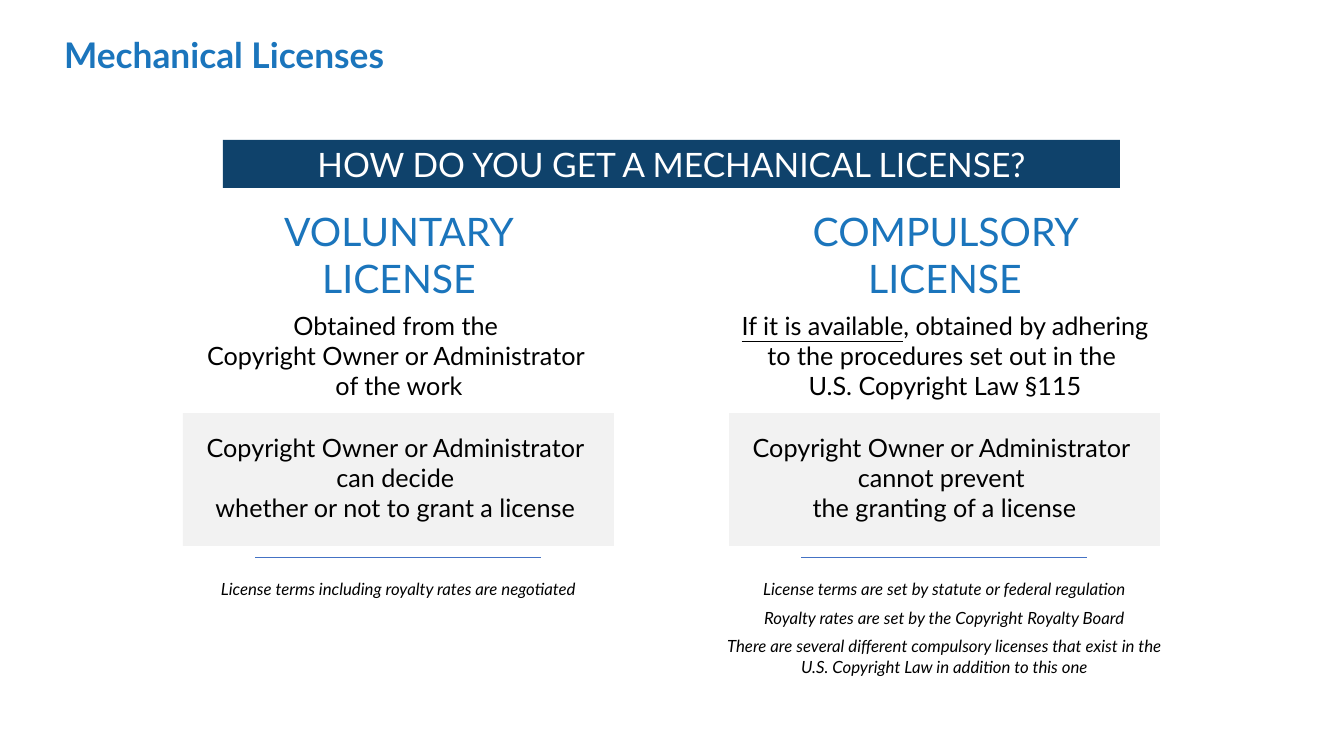
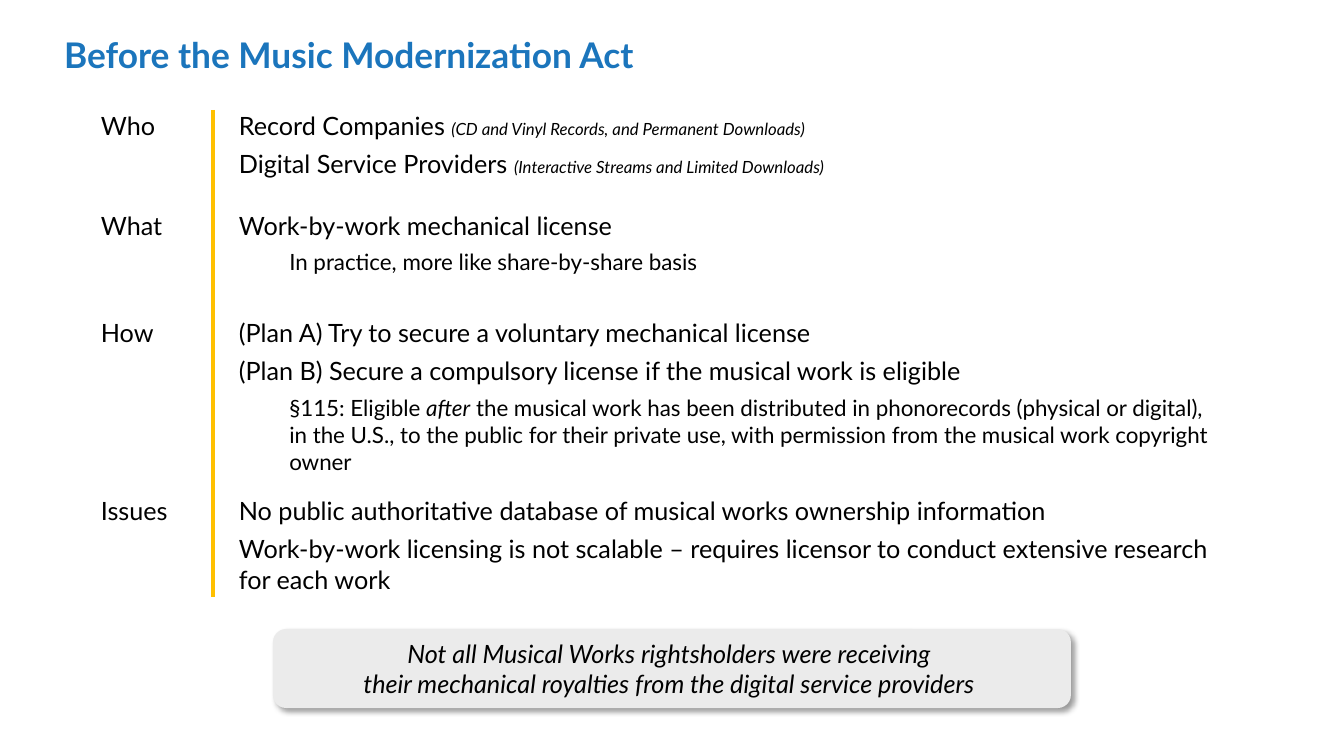
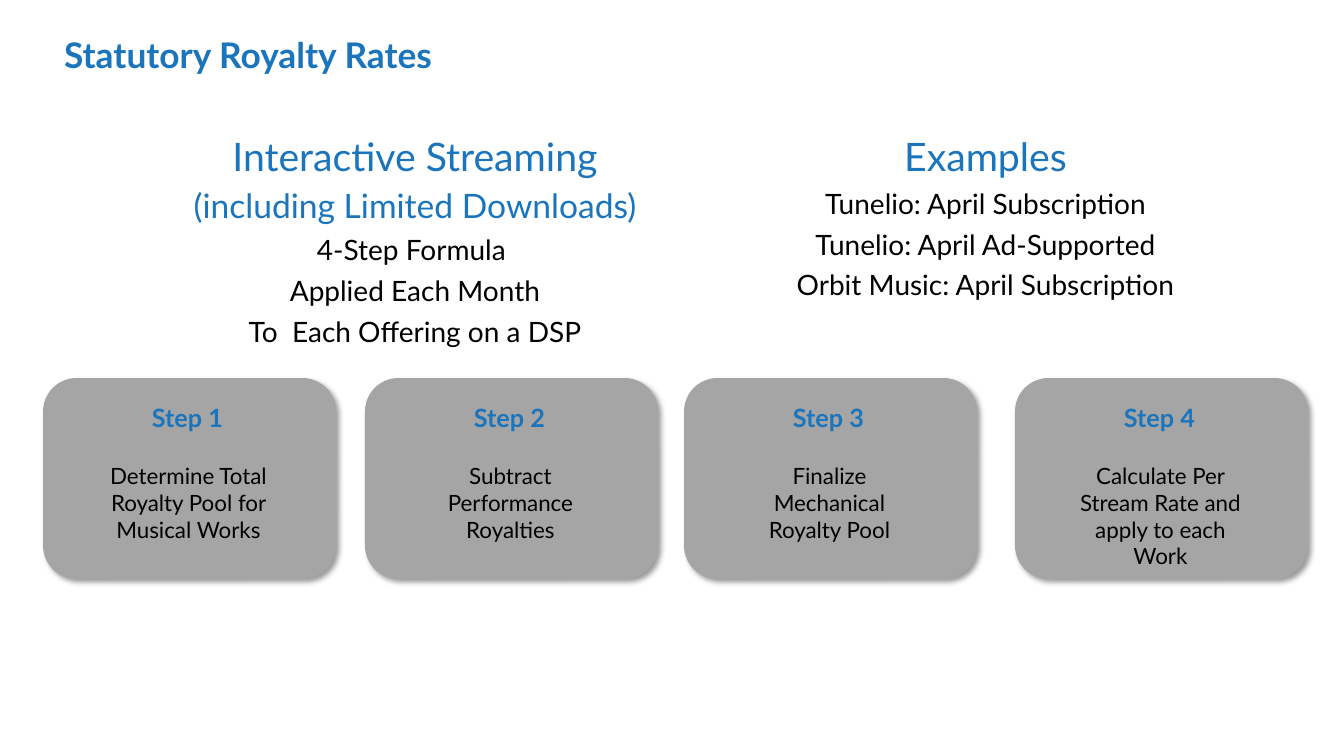
import pptx
import pptx.dml.color
import pptx.enum.shapes
import pptx.enum.text
import pptx.oxml
import pptx.oxml.ns
import pptx.util

RGB = pptx.dml.color.RGBColor
SHAPE = pptx.enum.shapes.MSO_SHAPE
ALIGN = pptx.enum.text.PP_ALIGN
ANCHOR = pptx.enum.text.MSO_ANCHOR
Pt = pptx.util.Pt

BLUE = RGB(0x1B, 0x75, 0xBC)
NAVY = RGB(0x0F, 0x42, 0x6B)
RULE_BLUE = RGB(0x44, 0x72, 0xC4)
GOLD = RGB(0xFF, 0xC0, 0x00)
WHITE = RGB(0xFF, 0xFF, 0xFF)
BLACK = RGB(0x00, 0x00, 0x00)
PALE = RGB(0xF2, 0xF2, 0xF2)
LIGHT = RGB(0xEB, 0xEB, 0xEB)
GREY = RGB(0xA5, 0xA5, 0xA5)

FONT = "Lato"
PX_PER_INCH = 100.8
TITLE_ONLY = 5
CENTRED = {"alignment": ALIGN.CENTER}
LEFT = {"alignment": ALIGN.LEFT}
SPACED = {"alignment": ALIGN.LEFT, "space_after": Pt(6)}
NOTE = {"alignment": ALIGN.CENTER, "space_after": Pt(6)}
HEADING = {"size": Pt(28), "color": BLUE}
BODY = {"size": Pt(18)}
DETAIL = {"size": Pt(16)}
SMALL = {"size": Pt(12), "italic": True}
SHADOW = (
    '<a:effectLst {}><a:outerShdw blurRad="50800" dist="38100" dir="2700000" '
    'algn="tl" rotWithShape="0"><a:srgbClr val="000000"><a:alpha val="40000"/>'
    "</a:srgbClr></a:outerShdw></a:effectLst>"
)


def px(length):
    """Turn pixels into EMU."""
    return pptx.util.Emu(round(length * 914400 / PX_PER_INCH))


def apply(target, values):
    """Set each attribute named in a dict."""
    for name, value in values.items():
        setattr(target, name, value)


def format_font(font, values):
    """Format a font, black by default."""
    values = {"name": FONT, "color": BLACK, **values}
    font.color.rgb = values.pop("color")
    apply(font, values)


def write(frame, lines, layout, look):
    """Write lines, each a string or a list of (text, look) spans."""
    frame.word_wrap = True
    for index, line in enumerate(lines):
        para = frame.paragraphs[0] if index == 0 else frame.add_paragraph()
        apply(para, layout)
        for text, extra in [(line, {})] if isinstance(line, str) else line:
            span = para.add_run()
            span.text = text
            format_font(span.font, {**look, **extra})
    return frame


def add_text(shapes, box, lines, layout, look):
    """Add a text box."""
    frame = shapes.add_textbox(*map(px, box)).text_frame
    return write(frame, lines, layout, look)


def add_panel(shapes, kind, box, colour, shadow=False):
    """Add a filled shape without outline."""
    panel = shapes.add_shape(kind, *map(px, box))
    panel.fill.solid()
    panel.fill.fore_color.rgb = colour
    panel.line.fill.background()
    if shadow:
        effect = SHADOW.format(pptx.oxml.ns.nsdecls("a"))
        panel._element.spPr.append(pptx.oxml.parse_xml(effect))
    else:
        panel.shadow.inherit = False
    return panel


def add_rule(page, start, end, colour, width):
    """Add a straight line."""
    straight = pptx.enum.shapes.MSO_CONNECTOR.STRAIGHT
    rule = page.shapes.add_connector(straight, *map(px, start + end))
    rule.line.color.rgb = colour
    rule.line.width = Pt(width)
    effect = pptx.oxml.parse_xml("<a:effectLst %s/>" % pptx.oxml.ns.nsdecls("a"))
    rule._element.spPr.append(effect)


def add_page(deck, title):
    """Add a slide with the shared title style."""
    page = deck.slides.add_slide(deck.slide_layouts[TITLE_ONLY])
    holder = page.shapes.title
    apply(holder, dict(left=px(54), top=px(33), width=px(1159), height=px(48)))
    look = {"size": Pt(25.2), "bold": True, "color": BLUE}
    frame = write(holder.text_frame, [title], {**LEFT, "line_spacing": 0.9}, look)
    apply(frame, {"vertical_anchor": ANCHOR.MIDDLE,
                  "auto_size": pptx.enum.text.MSO_AUTO_SIZE.NONE})
    return page


def add_license_column(page, left, top, heading, source, decision, notes):
    """Place one kind of license, from heading to notes."""
    width = 431
    middle = left + width / 2
    add_text(page.shapes, (left + 52, top, 328, 105), heading, CENTRED, HEADING)
    add_text(page.shapes, (left - 58, top + 103, 548, 100), source, CENTRED, BODY)
    panel = add_panel(page.shapes, SHAPE.RECTANGLE, (left, top + 211, width, 133), PALE)
    frame = write(panel.text_frame, decision, CENTRED, BODY)
    apply(frame, {"vertical_anchor": ANCHOR.TOP, "margin_top": px(19)})
    add_rule(page, (middle - 143, top + 355), (middle + 143, top + 355), RULE_BLUE, 0.5)
    add_text(page.shapes, (left - 18, top + 372, 467, 109), notes, NOTE, SMALL)


def build_licenses(deck):
    """Build the slide that sets two kinds of license side by side."""
    page = add_page(deck, "Mechanical Licenses")
    banner = add_panel(page.shapes, SHAPE.RECTANGLE, (223, 140, 897, 48), NAVY)
    frame = write(banner.text_frame, ["HOW DO YOU GET A MECHANICAL LICENSE?"],
                  CENTRED, {"size": Pt(24), "color": WHITE})
    frame.vertical_anchor = ANCHOR.MIDDLE
    add_license_column(
        page, 183, 202,
        ["VOLUNTARY", "LICENSE"],
        ["Obtained from the ", "Copyright Owner or Administrator ", "of the work"],
        ["Copyright Owner or Administrator ", "can decide ",
         "whether or not to grant a license "],
        ["License terms including royalty rates are negotiated"])
    add_license_column(
        page, 729, 202,
        ["COMPULSORY LICENSE"],
        [[("If it is available", {"underline": True}), (", obtained by adhering", {})],
         "to the procedures set out in the ", "U.S. Copyright Law §115"],
        ["Copyright Owner or Administrator ", "cannot prevent ",
         "the granting of a license"],
        ["License terms are set by statute or federal regulation",
         "Royalty rates are set by the Copyright Royalty Board",
         "There are several different compulsory licenses that exist in the "
         "U.S. Copyright Law in addition to this one"])


def add_topic(page, left, top, height, label, lines, detail=None):
    """Place a label and its points, with an optional indented detail."""
    add_text(page.shapes, (left, top, 107, 40), [label], SPACED, BODY)
    points = lines + [detail] if detail else lines
    frame = add_text(page.shapes, (left + 138, top, 1000, height), points, SPACED, BODY)
    if detail:
        para = frame.paragraphs[-1]
        para.level = 1
        para._p.get_or_add_pPr().set("marL", str(pptx.util.Inches(0.5)))


def build_before_act(deck):
    """Build the slide on licensing before the act."""
    page = add_page(deck, "Before the Music Modernization Act")
    add_rule(page, (213, 110), (213, 597), GOLD, 3)
    topics = [
        (105, 80, "Who",
         [[("Record Companies ", {}),
           ("(CD and Vinyl Records, and Permanent Downloads)", SMALL)],
          [("Digital Service Providers ", {}),
           ("(Interactive Streams and Limited Downloads)", SMALL)]]),
        (205, 77, "What", ["Work-by-work mechanical license"],
         [("In practice, more like share-by-share basis", DETAIL)]),
        (312, 169, "How",
         ["(Plan A) Try to secure a voluntary mechanical license",
          "(Plan B) Secure a compulsory license if the musical work is eligible"],
         [("§115: Eligible ", DETAIL), ("after", {**DETAIL, "italic": True}),
          (" the musical work has been distributed in phonorecords (physical or "
           "digital), in the U.S., to the public for their private use, with "
           "permission from the musical work copyright owner", DETAIL)]),
        (490, 110, "Issues",
         ["No public authoritative database of musical works ownership information",
          "Work-by-work licensing is not scalable – requires licensor to conduct "
          "extensive research for each work"]),
    ]
    for topic in topics:
        add_topic(page, 91, *topic)
    callout = add_panel(page.shapes, SHAPE.ROUNDED_RECTANGLE, (273, 629, 798, 79),
                        LIGHT, shadow=True)
    frame = write(callout.text_frame,
                  ["Not all Musical Works rightsholders were receiving ",
                   "their mechanical royalties from the digital service providers "],
                  CENTRED, {**BODY, "italic": True})
    frame.vertical_anchor = ANCHOR.MIDDLE


def add_summary(page, box, lines):
    """Place a centred list with tight lines."""
    layout = {**CENTRED, "line_spacing": 0.8}
    frame = add_text(page.shapes, box, lines, layout, {"size": Pt(20)})
    frame.margin_left = px(22)
    for para in frame.paragraphs[1:]:
        para.space_before = Pt(10)


def add_step(page, left, top, number, task):
    """Place one step card as a group."""
    shapes = page.shapes.add_group_shape().shapes
    add_panel(shapes, SHAPE.ROUNDED_RECTANGLE, (left, top, 293, 201), GREY, shadow=True)
    frame = add_text(shapes, (left + 99, top + 19, 95, 40), [f"Step {number}"],
                     LEFT, {**BODY, "bold": True, "color": BLUE})
    frame.word_wrap = False
    add_text(shapes, (left + 43, top + 79, 205, 119), [task], CENTRED, DETAIL)


def build_rates(deck):
    """Build the slide on the four-step royalty formula."""
    page = add_page(deck, "Statutory Royalty Rates")
    add_summary(page, (112, 136, 594, 132), [
        [("Interactive Streaming", HEADING)],
        [("(including Limited Downloads)", {**HEADING, "size": Pt(24)})],
        "4-Step Formula ", "Applied Each Month", "To  Each Offering on a DSP"])
    add_summary(page, (750, 136, 459, 132), [
        [("Examples", HEADING)],
        "Tunelio: April Subscription", "Tunelio: April Ad-Supported",
        "Orbit Music: April Subscription"])
    steps = [
        (43, "Determine Total Royalty Pool for Musical Works"),
        (365, "Subtract Performance Royalties"),
        (684, "Finalize Mechanical Royalty Pool"),
        (1015, "Calculate Per Stream Rate and apply to each Work"),
    ]
    for number, (left, task) in enumerate(steps, 1):
        add_step(page, left, 378, number, task)


def main():
    """Build and save the deck."""
    deck = pptx.Presentation()
    apply(deck, {"slide_width": px(1344), "slide_height": px(756)})
    build_licenses(deck)
    build_before_act(deck)
    build_rates(deck)
    deck.save("out.pptx")


if __name__ == "__main__":
    main()
